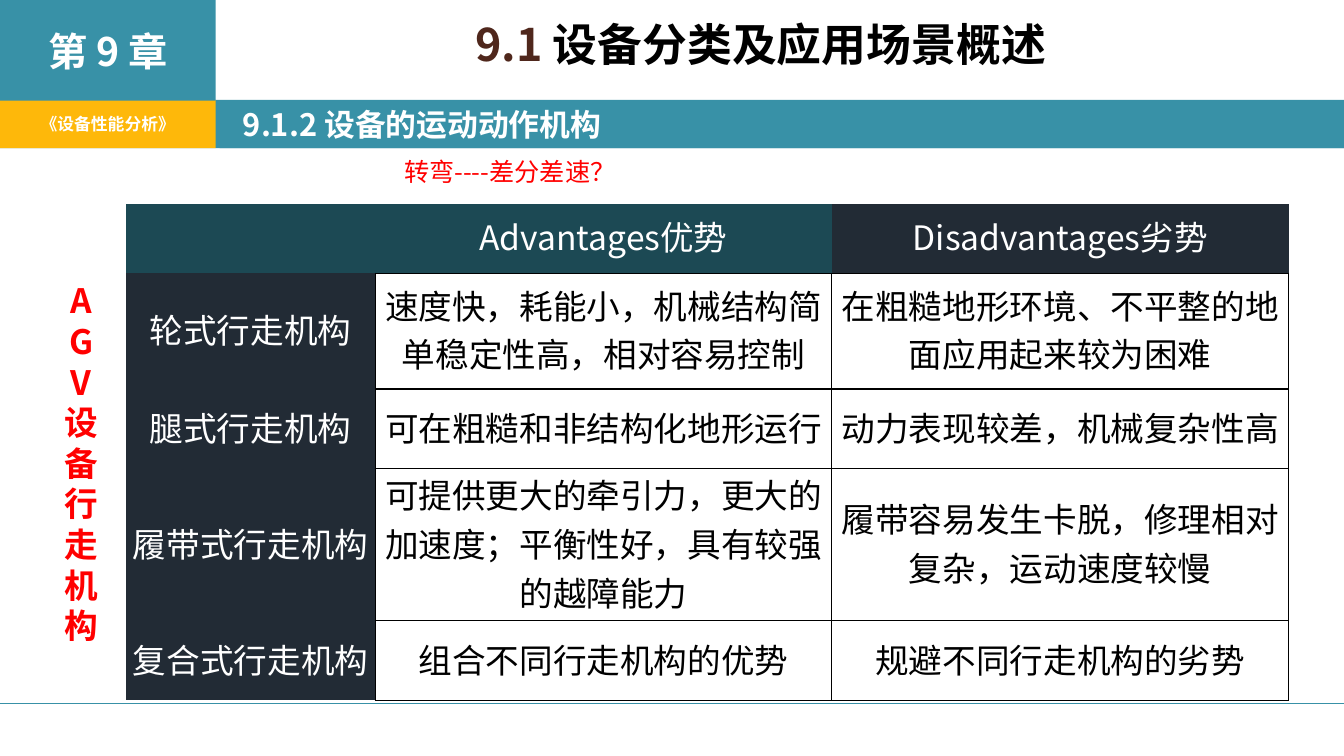
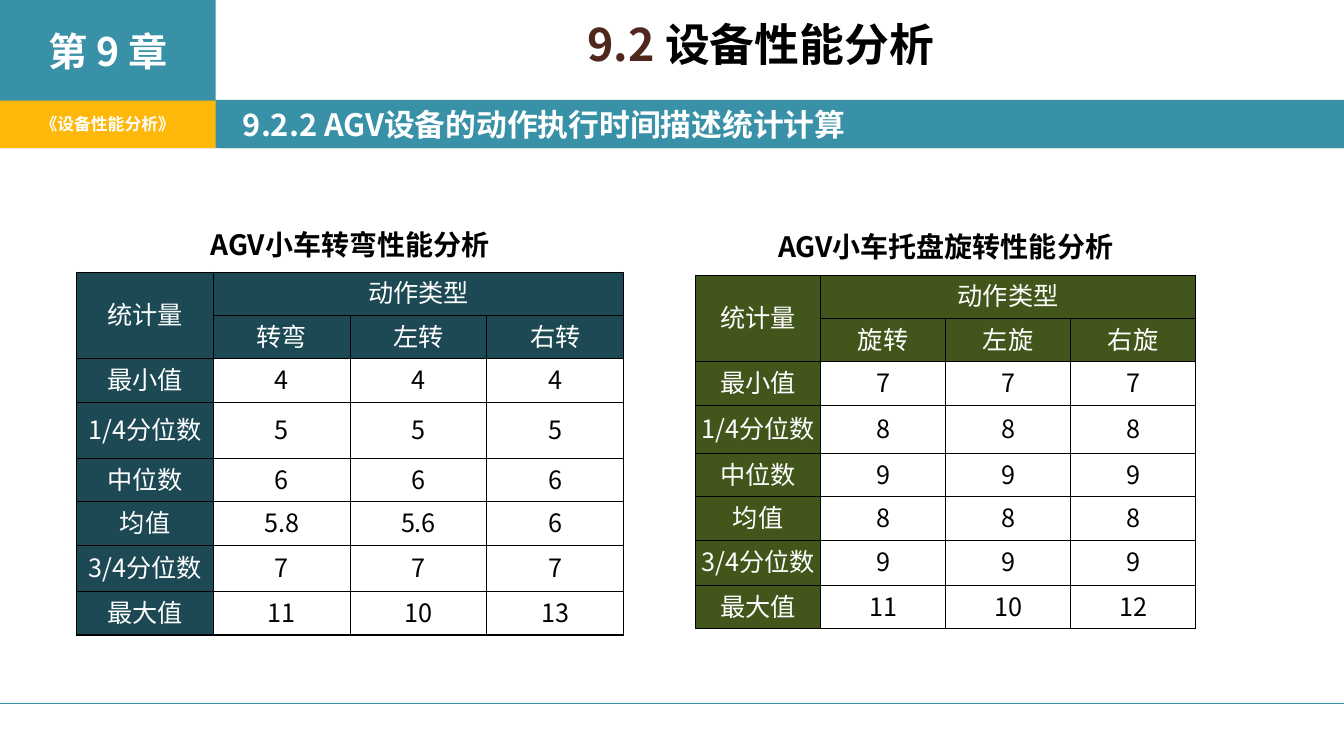
from lxml.etree import SubElement
from pptx import Presentation
from pptx.dml.color import RGBColor
from pptx.enum.shapes import MSO_CONNECTOR, MSO_SHAPE
from pptx.enum.text import MSO_ANCHOR, PP_ALIGN
from pptx.oxml.ns import qn
from pptx.util import Inches, Pt

SLIDE_W, SLIDE_H = Inches(13.33), Inches(7.5)
FONT = "Noto Sans CJK SC"
COLORS = {
    "teal": "3891A7", "amber": "FEB80A", "deep_teal": "1C4954",
    "navy": "222B35", "olive": "42551A", "brown": "4F271C",
    "red": "FF0000", "black": "000000", "white": "FFFFFF",
}
CELL_FORMAT = {
    "margin_left": Inches(0.01), "margin_right": Inches(0.01),
    "margin_top": Inches(0.01), "margin_bottom": Inches(0.05),
    "vertical_anchor": MSO_ANCHOR.MIDDLE,
}
PLAIN_TABLE = {"first_row": False, "horz_banding": False}
BORDER_TAGS = {"L": "a:lnL", "R": "a:lnR", "T": "a:lnT", "B": "a:lnB"}

BANNER = (0, 13.2, 100, 6.4)
COURSE = (0, 13.2, 16.05, 6.4)
CHAPTER = (0, 0, 16.05, 13.33)
TITLE = (17.33, 2.53, 78.55, 10.67)
SECTION = (16.35, 13.33, 83.65, 6.27)
FOOTER_Y = 93.07

MECHANISMS = [
    ["", "Advantages优势", "Disadvantages劣势"],
    ["轮式行走机构", "速度快，耗能小，机械结构简单稳定性高，相对容易控制",
     "在粗糙地形环境、不平整的地面应用起来较为困难"],
    ["腿式行走机构", "可在粗糙和非结构化地形运行", "动力表现较差，机械复杂性高"],
    ["履带式行走机构", "可提供更大的牵引力，更大的加速度；平衡性好，具有较强的越障能力",
     "履带容易发生卡脱，修理相对复杂，运动速度较慢"],
    ["复合式行走机构", "组合不同行走机构的优势", "规避不同行走机构的劣势"],
]
STATISTICS = ["最小值", "1/4分位数", "中位数", "均值", "3/4分位数", "最大值"]
TURNING = {
    "caption": "AGV小车转弯性能分析", "actions": ["转弯", "左转", "右转"],
    "values": ["4 4 4", "5 5 5", "6 6 6", "5.8 5.6 6", "7 7 7", "11 10 13"],
    "fill": "deep_teal",
    "rows": [0.53, 0.43, 0.43, 0.43, 0.56, 0.43, 0.43, 0.46, 0.43],
}
ROTATING = {
    "caption": "AGV小车托盘旋转性能分析", "actions": ["旋转", "左旋", "右旋"],
    "values": ["7 7 7", "8 8 8", "9 9 9", "8 8 8", "9 9 9", "11 10 12"],
    "fill": "olive",
    "rows": [0.56, 0.43, 0.43, 0.43, 0.48, 0.43, 0.43, 0.45, 0.43],
}


def rgb(color):
    return RGBColor.from_string(COLORS[color])


def apply(target, formats):
    for attribute, value in formats.items():
        setattr(target, attribute, value)


def place(box):
    left, top, width, height = box
    return (round(SLIDE_W * left / 100), round(SLIDE_H * top / 100),
            round(SLIDE_W * width / 100), round(SLIDE_H * height / 100))


def write(frame, runs, size, bold=False, align=PP_ALIGN.CENTER, spacing=None):
    paragraph = frame.paragraphs[0]
    apply(paragraph, {"alignment": align, "line_spacing": spacing})
    for words, color in runs:
        run = paragraph.add_run()
        run.text = words
        apply(run.font, {"name": FONT, "size": Pt(size), "bold": bold})
        run.font.color.rgb = rgb(color)
        east_asian = SubElement(run.font._element, qn("a:ea"))
        east_asian.set("typeface", FONT)


def add_band(slide, box, color):
    band = slide.shapes.add_shape(MSO_SHAPE.RECTANGLE, *place(box))
    band.shadow.inherit = False
    band.fill.solid()
    band.fill.fore_color.rgb = rgb(color)
    band.line.fill.background()
    apply(band.text_frame, {"word_wrap": True, "vertical_anchor": MSO_ANCHOR.MIDDLE})
    return band.text_frame


def add_words(slide, box, runs, size, **style):
    frame = slide.shapes.add_textbox(*place(box)).text_frame
    frame.word_wrap = True
    write(frame, runs, size, **style)


def add_footer_rule(slide):
    left, top, width, _ = place((0, FOOTER_Y, 100, 0))
    rule = slide.shapes.add_connector(MSO_CONNECTOR.STRAIGHT, left, top, width, top)
    rule.line.color.rgb = rgb("teal")
    rule.line.width = Pt(0.79)
    SubElement(rule._element.spPr, qn("a:effectLst"))


def add_frame(deck, number, title, section):
    slide = deck.slides.add_slide(deck.slide_layouts[6])
    add_band(slide, BANNER, "teal")
    course = add_band(slide, COURSE, "amber")
    write(course, [("《设备性能分析》", "white")], 12, bold=True)
    chapter = add_band(slide, CHAPTER, "teal")
    write(chapter, [("第 9 章", "white")], 28, bold=True)
    add_footer_rule(slide)
    add_words(slide, TITLE, [(number + " ", "brown"), (title, "black")], 32,
              bold=True, spacing=0.88)
    heading = add_band(slide, SECTION, "teal")
    heading.margin_left = Inches(0.23)
    write(heading, [(section, "white")], 22, bold=True, align=PP_ALIGN.LEFT)
    return slide


def set_borders(cell, sides):
    properties = cell._tc.get_or_add_tcPr()
    for position, (side, tag) in enumerate(BORDER_TAGS.items()):
        border = properties.makeelement(qn(tag), {"w": str(Pt(1))})
        properties.insert(position, border)
        if side in sides:
            ink = SubElement(SubElement(border, qn("a:solidFill")), qn("a:srgbClr"))
            ink.set("val", COLORS["black"])
        else:
            SubElement(border, qn("a:noFill"))


def fill_cell(cell, words, size, fill=None, color="black", bold=False, sides="LRTB"):
    apply(cell, CELL_FORMAT)
    if fill:
        cell.fill.solid()
        cell.fill.fore_color.rgb = rgb(fill)
    else:
        cell.fill.background()
    if words:
        write(cell.text_frame, [(words, color)], size, bold=bold)
    set_borders(cell, sides)


def add_grid(slide, box, columns, rows):
    left, top, width, height = place(box)
    grid = slide.shapes.add_table(len(rows), len(columns), left, top, width, height).table
    apply(grid, PLAIN_TABLE)
    for column, share in zip(grid.columns, columns):
        column.width = round(width * share / sum(columns))
    for row, share in zip(grid.rows, rows):
        row.height = round(height * share / sum(rows))
    return grid


def add_mechanism_table(slide, box):
    grid = add_grid(slide, box, [2.47, 4.53, 4.53], [0.69, 1.15, 0.79, 1.51, 0.79])
    for r, entries in enumerate(MECHANISMS):
        for c, words in enumerate(entries):
            style = {}
            if r == 0:
                style = {"fill": "navy" if c == 2 else "deep_teal",
                         "color": "white", "sides": "B" if c else ""}
            elif c == 0:
                style = {"fill": "navy", "color": "white", "sides": "R"}
            fill_cell(grid.cell(r, c), words, 24, **style)


def add_statistics_table(slide, box, study):
    grid = add_grid(slide, box, [1] * 4, study["rows"])
    entries = [[study["caption"], "", "", ""], ["统计量", "动作类型", "", ""],
               [""] + study["actions"]]
    entries += [[name] + line.split() for name, line in zip(STATISTICS, study["values"])]
    for start, end in [((0, 0), (0, 3)), ((1, 0), (2, 0)), ((1, 1), (1, 3))]:
        grid.cell(*start).merge(grid.cell(*end))
    for r, line in enumerate(entries):
        for c, words in enumerate(line):
            style = {"size": 18}
            if r == 0:
                style = {"size": 20, "bold": True, "sides": "B"}
            elif r < 3 or c == 0:
                style = {"size": 18, "fill": study["fill"], "color": "white"}
            fill_cell(grid.cell(r, c), words, **style)


def build_mechanism_slide(deck):
    slide = add_frame(deck, "9.1", "设备分类及应用场景概述", "9.1.2 设备的运动动作机构")
    add_mechanism_table(slide, (9.38, 26.93, 86.5, 65.73))
    add_words(slide, (3.9, 36.4, 4.28, 49.73), [("AGV设备行走机构", "red")], 24,
              bold=True, spacing=Pt(29))
    add_words(slide, (29.33, 20.53, 24.98, 5.33), [("转弯----差分差速？", "red")], 18,
              align=PP_ALIGN.LEFT, spacing=0.88)


def build_statistics_slide(deck):
    slide = add_frame(deck, "9.2", "设备性能分析", "9.2.2 AGV设备的动作执行时间描述统计计算")
    add_statistics_table(slide, (5.7, 28.93, 40.7, 55.07), TURNING)
    add_statistics_table(slide, (51.76, 28.93, 37.21, 54.27), ROTATING)


def main():
    deck = Presentation()
    apply(deck, {"slide_width": SLIDE_W, "slide_height": SLIDE_H})
    build_mechanism_slide(deck)
    build_statistics_slide(deck)
    deck.save("out.pptx")


if __name__ == "__main__":
    main()
